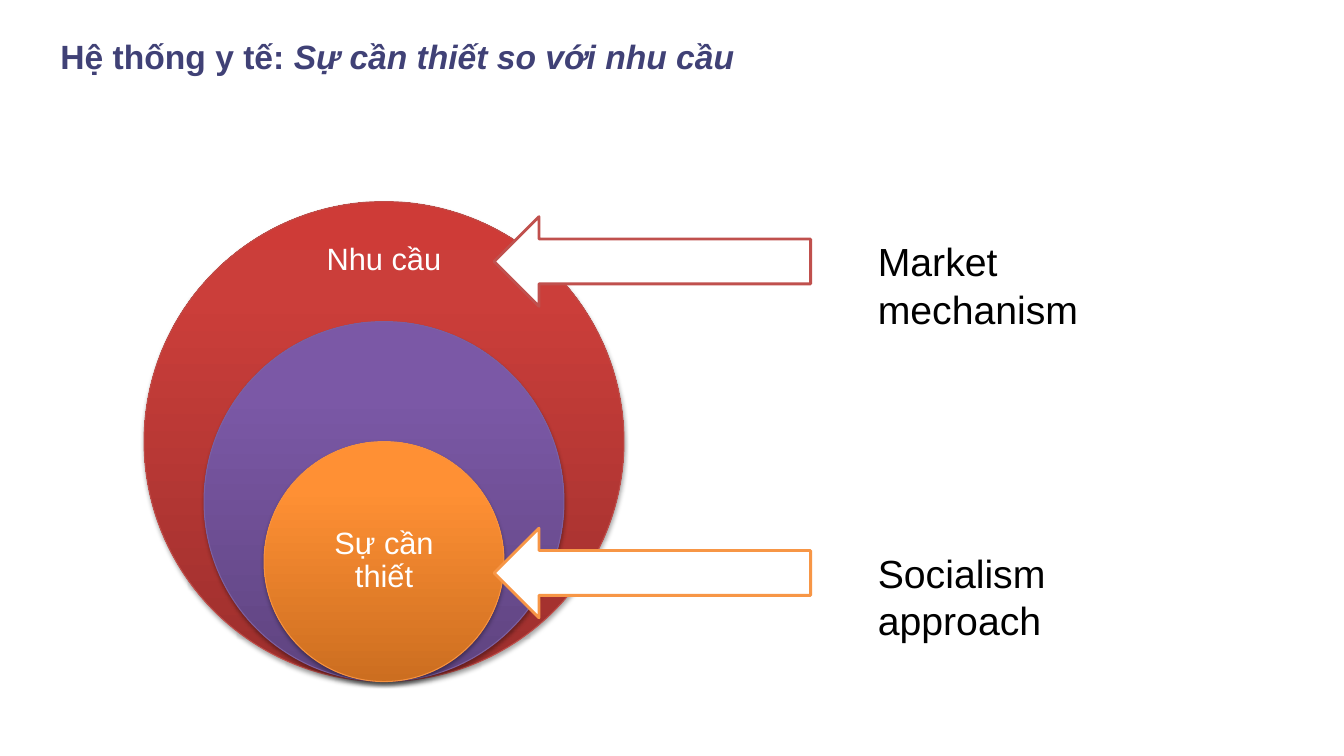
"""Build a slide of nested circles that sets health need against demand."""
from lxml.etree import fromstring
from pptx import Presentation
from pptx.dml.color import RGBColor
from pptx.enum.shapes import MSO_SHAPE
from pptx.enum.text import MSO_ANCHOR, PP_ALIGN
from pptx.util import Pt

TITLE = ("Hệ thống y tế: ", "Sự cần thiết so với nhu cầu")
RINGS = [
    {"scale": 1, "stops": ("9C2F2D", "CB3E3A", "CE3B37"), "line": "BF4C48"},
    {"scale": 0.75, "stops": ("5F4480", "7B58A6", "7C57A8"), "line": "7D60A0"},
    {"scale": 0.5, "stops": ("CC6E20", "FF9034", "FF9136"), "line": "F69240"},
]
NAMES = [
    ("Nhu cầu", (214.5, 160.5, 119.5, 51)),
    ("Sự cần thiết", (213.8, 358, 121, 85.5)),
]
SIDES = [
    ("Market mechanism", 154.8, "C0504D"),
    ("Socialism approach", 377.3, "F79646"),
]
THEME = {
    "font": "Arial", "title": "404176", "name": "FFFFFF", "side": "000000",
    "arrow": "FFFFFF", "title_size": 24, "name_size": 22, "side_size": 28,
}
WIDE, MID, BASE = 342.8, 274.3, 486.8
NS = 'xmlns:a="http://schemas.openxmlformats.org/drawingml/2006/main"'


def place(left, top, width, height):
    return Pt(left), Pt(top), Pt(width), Pt(height)


def tint(hue):
    return RGBColor.from_string(hue)


def style(para, role):
    for run in para.runs:
        run.font.name = THEME["font"]
        run.font.size = Pt(THEME[role + "_size"])
        run.font.color.rgb = tint(THEME[role])


def write(slide, text, box, role):
    frame = slide.shapes.add_textbox(*place(*box)).text_frame
    frame.word_wrap = True
    frame.text = text
    style(frame.paragraphs[0], role)
    return frame


def outline(slide, kind, box, hue, weight):
    shape = slide.shapes.add_shape(kind, *place(*box))
    shape.shadow.inherit = False
    shape.line.color.rgb = tint(hue)
    shape.line.width = Pt(weight)
    return shape


def shade(shape, stops):
    marks = "".join(
        f'<a:gs pos="{pos * 1000}"><a:srgbClr val="{hue}"/></a:gs>'
        for pos, hue in zip((0, 80, 100), stops))
    props = shape.element.spPr
    props.insert(2, fromstring(
        f'<a:gradFill {NS} rotWithShape="1"><a:gsLst>{marks}</a:gsLst>'
        '<a:lin ang="16200000" scaled="0"/></a:gradFill>'))
    props[-1].append(fromstring(
        f'<a:outerShdw {NS} blurRad="{Pt(3.1)}" dist="{Pt(1.8)}" dir="5400000" '
        'rotWithShape="0"><a:srgbClr val="000000"><a:alpha val="35000"/>'
        '</a:srgbClr></a:outerShdw>'))


def add_title(slide):
    title = slide.shapes.title
    title.left, title.top, title.width, title.height = place(36, 16.5, 728, 47.5)
    frame = title.text_frame
    frame.vertical_anchor = MSO_ANCHOR.MIDDLE
    para = frame.paragraphs[0]
    para.alignment = PP_ALIGN.LEFT
    for text, slant in zip(TITLE, (False, True)):
        run = para.add_run()
        run.text = text
        run.font.bold = True
        run.font.italic = slant
    style(para, "title")


def add_rings(slide):
    for ring in RINGS:
        size = WIDE * ring["scale"]
        box = (MID - size / 2, BASE - size, size, size)
        shape = outline(slide, MSO_SHAPE.OVAL, box, ring["line"], 0.75)
        shade(shape, ring["stops"])
    for text, box in NAMES:
        frame = write(slide, text, box, "name")
        frame.vertical_anchor = MSO_ANCHOR.MIDDLE
        frame.margin_left = frame.margin_right = Pt(12.3)
        frame.margin_top = frame.margin_bottom = Pt(12.3)
        frame.paragraphs[0].alignment = PP_ALIGN.CENTER
        frame.paragraphs[0].line_spacing = 0.9


def add_sides(slide):
    for text, top, hue in SIDES:
        arrow = outline(slide, MSO_SHAPE.LEFT_ARROW, (353, top, 226, 64), hue, 2)
        arrow.fill.solid()
        arrow.fill.fore_color.rgb = tint(THEME["arrow"])
        write(slide, text, (620, top + 11.5, 236, 41), "side")


def main():
    deck = Presentation()
    deck.slide_width, deck.slide_height = Pt(960), Pt(540)
    slide = deck.slides.add_slide(deck.slide_layouts[5])
    add_title(slide)
    add_rings(slide)
    add_sides(slide)
    deck.save("out.pptx")


if __name__ == "__main__":
    main()
